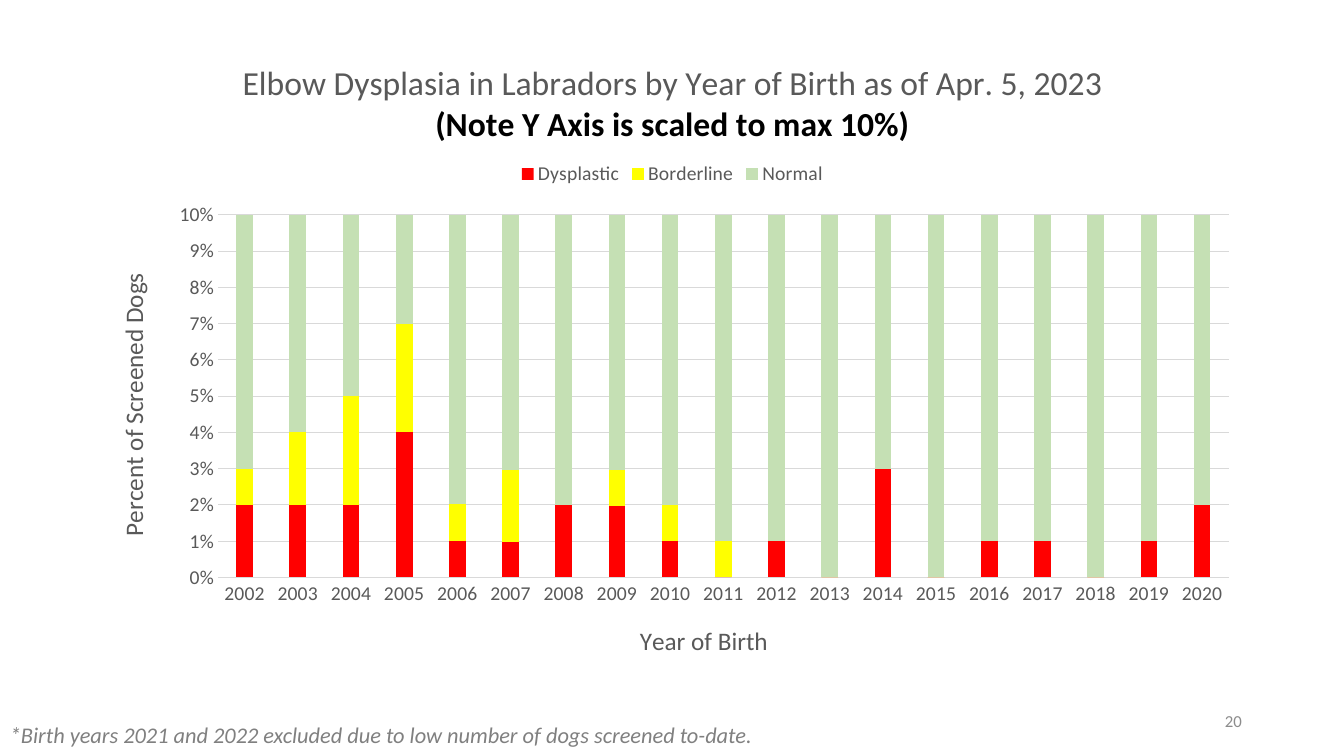
from lxml import etree
from pptx import Presentation
from pptx import util as u
from pptx.chart.data import CategoryChartData
from pptx.dml.color import RGBColor
from pptx.enum import chart as charts, text
from pptx.oxml import ns

COLORS = {"Dysplastic": "FF0000", "Borderline": "FFFF00", "Normal": "C5E0B4",
          "label": "595959", "grid": "D9D9D9", "black": "000000",
          "note": "808080", "number": "8C8C8C"}
YEARS = range(2002, 2021)
# Whole percents of the screened dogs
SERIES = {
    "Dysplastic": [2, 2, 2, 4, 1, 1, 2, 2, 1, 0, 1, 0, 3, 0, 1, 1, 0, 1, 2],
    "Borderline": [1, 2, 3, 3, 1, 2, 0, 1, 1, 1, 0, 0, 0, 0, 0, 0, 0, 0, 0],
    "Normal": [97, 96, 95, 93, 97, 98, 98, 98, 98, 99,
               99, 100, 97, 100, 99, 99, 100, 99, 98]}


def set_font(font, color, **values):
    for name, value in {"name": "Calibri", "bold": False, **values}.items():
        setattr(font, name, value)
    font.color.rgb = RGBColor.from_string(COLORS[color])


def write(frame, lines):
    """Fill a frame with one paragraph per (words, color, format) line."""
    for index, (words, color, values) in enumerate(lines):
        para = frame.add_paragraph() if index else frame.paragraphs[0]
        span = para.add_run()
        span.text = words
        set_font(span.font, color, **values)


def place(element, **percents):
    """Fix a chart part at percents of the chart box."""
    layout = element.find(ns.qn("c:layout"))
    if layout is None:
        layout = etree.Element(ns.qn("c:layout"))
        words = element.find(ns.qn("c:tx"))
        if words is None:
            element.insert(0, layout)
        else:
            words.addnext(layout)
    manual = etree.SubElement(layout, ns.qn("c:manualLayout"))
    if "w" in percents:
        etree.SubElement(manual, ns.qn("c:layoutTarget"), val="inner")
    for side in "xy":
        etree.SubElement(manual, ns.qn(f"c:{side}Mode"), val="edge")
    for name, value in percents.items():
        etree.SubElement(manual, ns.qn(f"c:{name}"), val=str(value / 100))


def format_axis(axis, title):
    axis.major_tick_mark = axis.minor_tick_mark = charts.XL_TICK_MARK.NONE
    set_font(axis.tick_labels.font, "label", size=u.Pt(14))
    write(axis.axis_title.text_frame, [(title, "label", {"size": u.Pt(18)})])


def draw_line(line):
    line.color.rgb = RGBColor.from_string(COLORS["grid"])
    line.width = u.Pt(0.75)


def add_dysplasia_chart(page, box):
    data = CategoryChartData()
    data.categories = [str(year) for year in YEARS]
    for name, values in SERIES.items():
        data.add_series(name, values)
    chart = page.shapes.add_chart(
        charts.XL_CHART_TYPE.COLUMN_STACKED_100, *box, data).chart
    set_font(chart.font, "black", size=u.Pt(10))

    # Title and legend
    write(chart.chart_title.text_frame, [
        ("Elbow Dysplasia in Labradors by Year of Birth as of Apr. 5, 2023",
         "label", {"size": u.Pt(24)}),
        ("(Note Y Axis is scaled to max 10%)",
         "black", {"size": u.Pt(24), "bold": True})])
    chart.has_legend = True
    chart.legend.position = charts.XL_LEGEND_POSITION.TOP
    chart.legend.include_in_layout = False
    set_font(chart.legend.font, "label", size=u.Pt(14))

    # Columns
    plot = chart.plots[0]
    plot.gap_width, plot.overlap, plot.vary_by_categories = 219, 100, False
    for series in plot.series:
        series.format.fill.solid()
        series.format.fill.fore_color.rgb = RGBColor.from_string(COLORS[series.name])

    # Axes
    years, share = chart.category_axis, chart.value_axis
    format_axis(years, "Year of Birth")
    format_axis(share, "Percent of Screened Dogs")
    draw_line(years.format.line)
    draw_line(share.major_gridlines.format.line)
    share.format.line.fill.background()
    share.minimum_scale, share.maximum_scale, share.major_unit = 0, 0.1, 0.01
    share.tick_labels.number_format = "0%"
    share.tick_labels.number_format_is_linked = False

    # Layout
    area = plot._element.getparent()
    place(area, x=10.8, y=27.2, w=87.2, h=56.6)
    for axis, left, top in ((years, 46.8, 90.2), (share, 1.6, 35.6)):
        place(axis.axis_title._element, x=left, y=top)


def add_line_of_text(page, box, line, align, anchor):
    frame = page.shapes.add_textbox(*box).text_frame
    frame.word_wrap = True
    frame.vertical_anchor = anchor
    write(frame, [line])
    frame.paragraphs[0].alignment = align


def main():
    deck = Presentation()
    deck.slide_width, deck.slide_height = u.Cm(33.87), u.Cm(19.05)
    page = deck.slides.add_slide(deck.slide_layouts[6])
    add_dysplasia_chart(page, [u.Cm(n) for n in (2.34, 1.02, 29.21, 16.15)])
    # Footnote and page number
    add_line_of_text(
        page, [u.Cm(n) for n in (0, 18.05, 23.77, 0.94)],
        ("*Birth years 2021 and 2022 excluded due to low number of dogs screened to-date.",
         "note", {"size": u.Pt(16), "italic": True}),
        text.PP_ALIGN.LEFT, text.MSO_ANCHOR.TOP)
    add_line_of_text(
        page, [u.Cm(n) for n in (23.93, 17.65, 7.62, 1.02)],
        ("20", "number", {"size": u.Pt(12)}),
        text.PP_ALIGN.RIGHT, text.MSO_ANCHOR.MIDDLE)
    deck.save("out.pptx")


if __name__ == "__main__":
    main()
